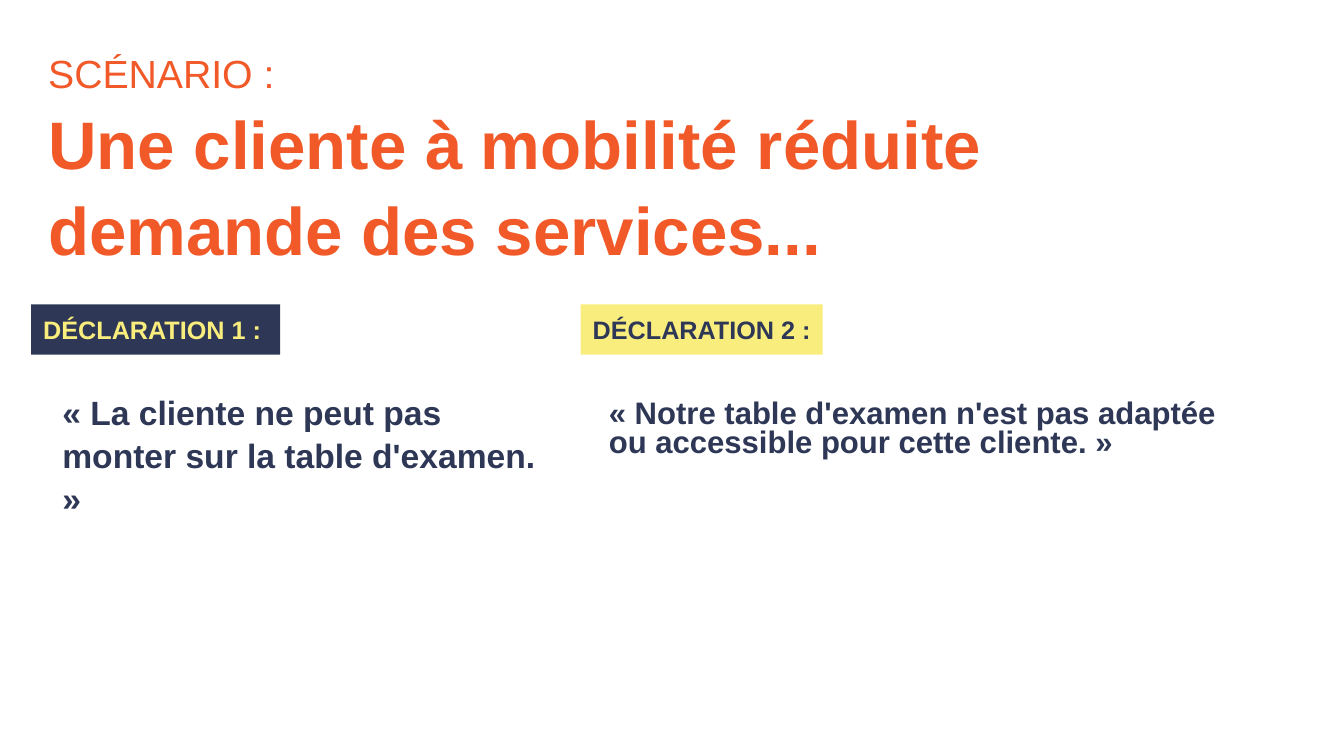
from pptx import Presentation
from pptx.dml.color import RGBColor
from pptx.enum.shapes import MSO_SHAPE
from pptx.enum.text import MSO_ANCHOR, MSO_AUTO_SIZE, PP_ALIGN
from pptx.util import Inches, Pt

theme = {
    "font": "Arial",
    "orange": RGBColor.from_string("F15928"),
    "navy": RGBColor.from_string("2E3856"),
    "yellow": RGBColor.from_string("F9ED7D"),
    "kicker": 28,
    "title": 48,
    "label": 18,
}


def set_frame(shape, anchor, wrap):
    frame = shape.text_frame
    frame.word_wrap = wrap
    frame.vertical_anchor = anchor
    frame.margin_left = frame.margin_right = Inches(0.1)
    frame.margin_top = frame.margin_bottom = Inches(0.1)
    return frame.paragraphs[0]


def add_run(para, text, size, color, bold=True):
    span = para.add_run()
    span.text = text
    span.font.name = theme["font"]
    span.font.size = Pt(size)
    span.font.bold = bold
    span.font.color.rgb = theme[color]


deck = Presentation()
deck.slide_width = Inches(13.33)
deck.slide_height = Inches(7.5)
page = deck.slides.add_slide(deck.slide_layouts[6])

title = page.shapes.add_textbox(Inches(0.38), Inches(0.36), Inches(10.96), Inches(1.83))
para = set_frame(title, MSO_ANCHOR.TOP, True)
para.line_spacing = 1.07
add_run(para, "SCÉNARIO : ", theme["kicker"], "orange", False)
para.add_line_break()
add_run(para, "Une cliente à mobilité réduite demande des services...", theme["title"], "orange")

statements = [
    (0.52, 3.76, 5.02, 2.07, 24, 1.07, "« La cliente ne peut pas monter sur la table d'examen. »"),
    (5.94, 3.87, 6.35, 1.01, 22.2, 0.8,
     "« Notre table d'examen n'est pas adaptée ou accessible pour cette cliente. »"),
]
for left, top, width, height, size, spacing, text in statements:
    box = page.shapes.add_textbox(Inches(left), Inches(top), Inches(width), Inches(height))
    para = set_frame(box, MSO_ANCHOR.TOP, True)
    para.line_spacing = spacing
    para.space_after = Pt(12)
    add_run(para, text, size, "navy")

labels = [
    (0.31, 2.47, "navy", "yellow", "DÉCLARATION 1 : "),
    (5.76, 2.4, "yellow", "navy", "DÉCLARATION 2 :"),
]
for left, width, fill, color, text in labels:
    label = page.shapes.add_shape(
        MSO_SHAPE.RECTANGLE, Inches(left), Inches(3.02), Inches(width), Inches(0.5))
    label.shadow.inherit = False
    label.fill.solid()
    label.fill.fore_color.rgb = theme[fill]
    label.line.fill.background()
    para = set_frame(label, MSO_ANCHOR.MIDDLE, False)
    label.text_frame.auto_size = MSO_AUTO_SIZE.SHAPE_TO_FIT_TEXT
    para.alignment = PP_ALIGN.CENTER
    add_run(para, text, theme["label"], color)

deck.save("out.pptx")
